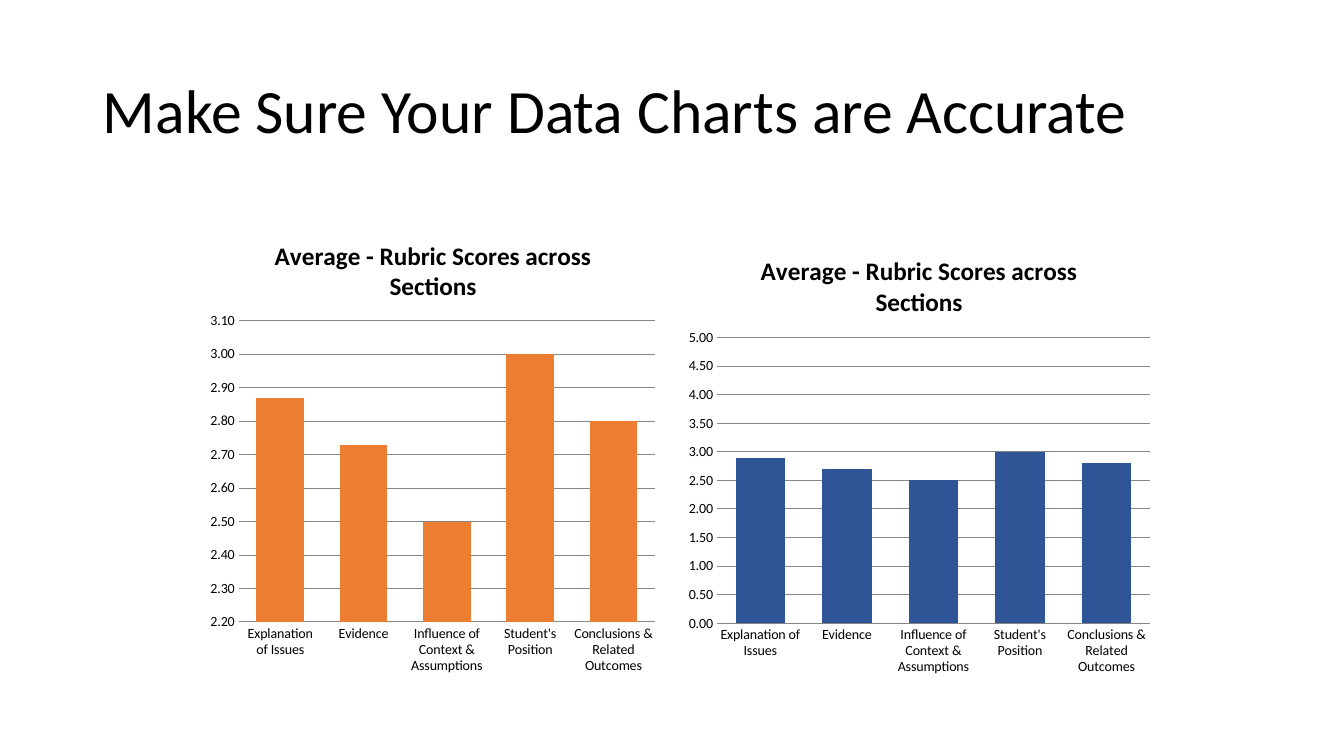
import lxml.etree
import pptx
import pptx.util
import pptx.oxml
import pptx.oxml.ns
import pptx.dml.color
import pptx.chart.data
import pptx.enum.chart
import pptx.enum.text
from pptx.util import Inches

FONT = "Calibri"
CATEGORIES = ["Explanation of Issues", "Evidence", "Influence of Context & Assumptions",
              "Student's Position", "Conclusions & Related Outcomes"]


def rgb(value):
    return pptx.dml.color.RGBColor.from_string(value)


def format_font(font, size, bold=False):
    font.name = FONT
    font.size = pptx.util.Pt(size)
    font.bold = bold
    font.color.rgb = rgb("000000")


def set_title(s, text):
    sp = s.shapes.title
    sp.left, sp.top, sp.width, sp.height = Inches(0.92), Inches(0.4), Inches(11.5), Inches(1.45)
    tf = sp.text_frame
    tf.text = text
    tf.word_wrap = True
    tf.vertical_anchor = pptx.enum.text.MSO_ANCHOR.MIDDLE
    p = tf.paragraphs[0]
    p.alignment = pptx.enum.text.PP_ALIGN.LEFT
    p.line_spacing = 0.9
    format_font(p.runs[0].font, 44)


def format_axes(chart, low, high, step):
    axis = chart.value_axis
    axis.minimum_scale, axis.maximum_scale, axis.major_unit = low, high, step
    axis.tick_labels.number_format = "0.00"
    axis.tick_labels.number_format_is_linked = False
    axis.has_major_gridlines = True
    axis.major_gridlines.format.line.color.rgb = rgb("868686")
    axis.format.line.fill.background()
    chart.category_axis.format.line.color.rgb = rgb("868686")
    for ax in (axis, chart.category_axis):
        ax.major_tick_mark = pptx.enum.chart.XL_TICK_MARK.NONE
        ax.minor_tick_mark = pptx.enum.chart.XL_TICK_MARK.NONE


def place_plot(chart, top, height):
    qn = pptx.oxml.ns.qn
    area = chart.plots[0]._element.getparent()
    for old in area.findall(qn("c:layout")):
        area.remove(old)
    layout = lxml.etree.Element(qn("c:layout"))
    area.insert(0, layout)
    manual = lxml.etree.SubElement(layout, qn("c:manualLayout"))
    settings = [("layoutTarget", "inner"), ("xMode", "edge"), ("yMode", "edge"),
                ("x", 0.08), ("y", top), ("w", 0.9), ("h", height)]
    for name, value in settings:
        lxml.etree.SubElement(manual, qn("c:" + name)).set("val", str(value))


def add_score_chart(s, box, scores, color, scale, plot_top, plot_height):
    data = pptx.chart.data.CategoryChartData()
    data.categories = CATEGORIES
    data.add_series("Series 1", scores)
    chart = s.shapes.add_chart(pptx.enum.chart.XL_CHART_TYPE.COLUMN_CLUSTERED,
                               *[Inches(v) for v in box], data).chart
    format_font(chart.font, 10)
    chart.has_legend = False
    chart.has_title = True
    tf = chart.chart_title.text_frame
    tf.text = "Average - Rubric Scores across Sections"
    format_font(tf.paragraphs[0].runs[0].font, 18, bold=True)
    format_axes(chart, *scale)
    place_plot(chart, plot_top, plot_height)
    plot = chart.plots[0]
    plot.gap_width = 75
    plot.overlap = -25
    plot.vary_by_categories = False
    fill = plot.series[0].format.fill
    fill.solid()
    fill.fore_color.rgb = rgb(color)


def main():
    prs = pptx.Presentation()
    prs.slide_width, prs.slide_height = Inches(13.33), Inches(7.5)
    s = prs.slides.add_slide(prs.slide_layouts[5])
    set_title(s, "Make Sure Your Data Charts are Accurate")
    add_score_chart(s, (2, 2.17, 4.59, 4.6), [2.87, 2.73, 2.5, 3, 2.8],
                    "ED7D31", (2.2, 3.1, 0.1), 0.22, 0.65)
    add_score_chart(s, (6.73, 2.33, 4.77, 4.43), [2.9, 2.7, 2.5, 3, 2.8],
                    "2F5597", (0, 5, 0.5), 0.23, 0.64)
    prs.save("out.pptx")


if __name__ == "__main__":
    main()
